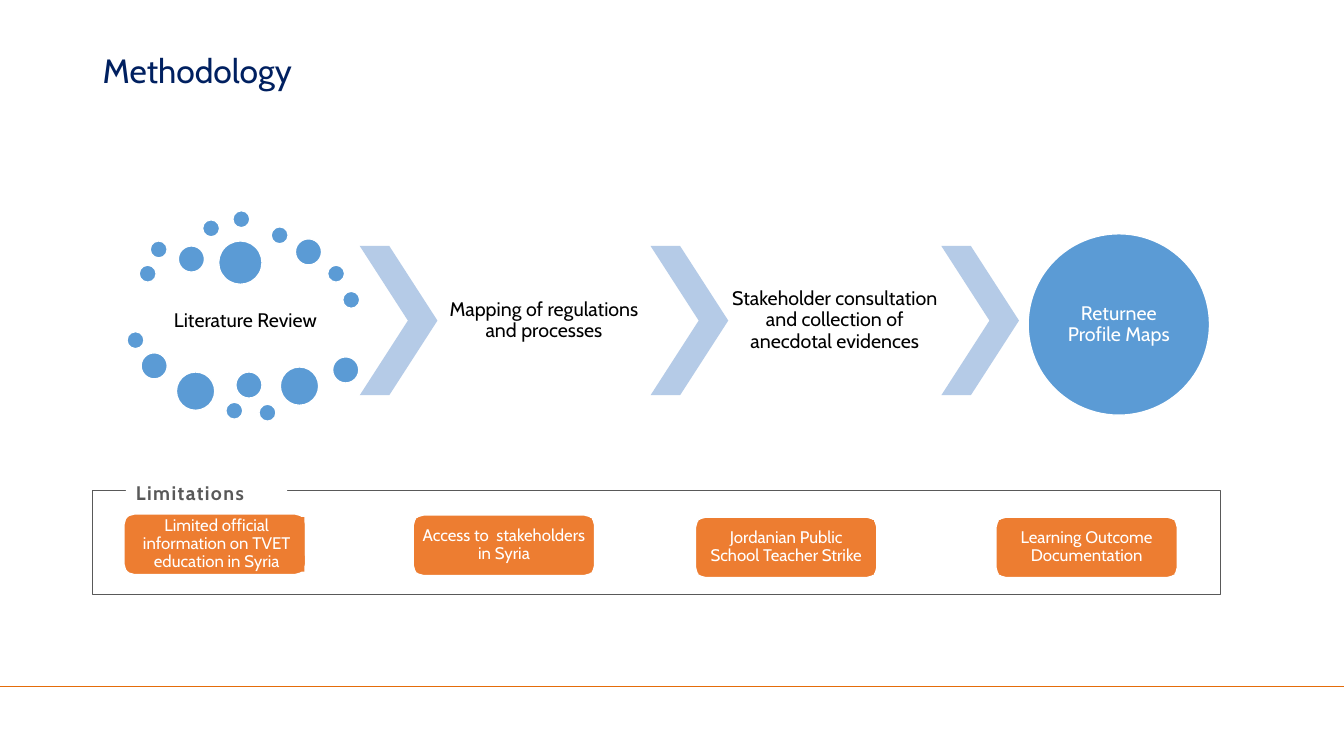
from lxml.etree import SubElement
from pptx import Presentation
from pptx.dml.color import RGBColor
from pptx.enum.shapes import MSO_CONNECTOR, MSO_SHAPE
from pptx.enum.text import MSO_ANCHOR, PP_ALIGN
from pptx.oxml.ns import qn
from pptx.util import Pt

NAVY = RGBColor(0x00, 0x20, 0x60)
BLUE = RGBColor(0x5B, 0x9B, 0xD5)
PALE_BLUE = RGBColor(0xB5, 0xCB, 0xE7)
ORANGE = RGBColor(0xED, 0x7D, 0x31)
RULE_ORANGE = RGBColor(0xE4, 0x6C, 0x0A)
GREY = RGBColor(0x59, 0x59, 0x59)
BLACK = RGBColor(0x00, 0x00, 0x00)
WHITE = RGBColor(0xFF, 0xFF, 0xFF)


class SlideBuilder:
    """Holds the text style and the current page; all lengths are in points."""

    font_name = "Cabin"

    def __init__(self, page):
        self.page = page

    def add_text(self, box, text, size, color, align=PP_ALIGN.CENTER,
                 anchor=MSO_ANCHOR.MIDDLE, inset=None, line_spacing=0.9,
                 bold=False, tracking=None):
        frame = box.text_frame
        frame.word_wrap = True
        frame.vertical_anchor = anchor
        if inset is not None:
            frame.margin_left = frame.margin_right = Pt(inset)
            frame.margin_top = frame.margin_bottom = Pt(inset)
        para = frame.paragraphs[0]
        para.alignment = align
        para.line_spacing = line_spacing
        para.space_before = Pt(0)
        span = para.add_run()
        span.text = text
        span.font.name = self.font_name
        span.font.size = Pt(size)
        span.font.bold = bold
        span.font.color.rgb = color
        if tracking:
            span.font._element.set("spc", str(tracking))

    def title(self, text, left, top, width, height):
        box = self.page.shapes.title
        box.left, box.top = Pt(left), Pt(top)
        box.width, box.height = Pt(width), Pt(height)
        self.add_text(box, text, 24, NAVY, align=PP_ALIGN.LEFT)

    def shape(self, kind, left, top, width, height, fill=None, line=None, line_width=1):
        box = self.page.shapes.add_shape(kind, Pt(left), Pt(top), Pt(width), Pt(height))
        box.shadow.inherit = False
        if fill is None:
            box.fill.background()
        else:
            box.fill.solid()
            box.fill.fore_color.rgb = fill
        if line is None:
            box.line.fill.background()
        else:
            box.line.color.rgb = line
            box.line.width = Pt(line_width)
        return box

    def circle(self, left, top, size):
        return self.shape(MSO_SHAPE.OVAL, left, top, size, size, BLUE, WHITE)

    def label(self, text, left, top, width, height):
        box = self.page.shapes.add_textbox(Pt(left), Pt(top), Pt(width), Pt(height))
        self.add_text(box, text, 14, BLACK, inset=1.4)

    def chevron(self, left, top, width, height):
        box = self.shape(MSO_SHAPE.CHEVRON, left, top, width, height, PALE_BLUE)
        box.adjustments[0] = 0.62

    def card(self, text, left, top, shift):
        self.shape(MSO_SHAPE.ROUNDED_RECTANGLE, left, top, 129.6, 43.2, ORANGE, WHITE)
        face = self.shape(MSO_SHAPE.RECTANGLE, left + shift, top + 2.2, 125.3, 38.9, ORANGE)
        self.add_text(face, text, 12, WHITE, inset=3.6)

    def rule(self, left, top, right, color, width):
        line = self.page.shapes.add_connector(
            MSO_CONNECTOR.STRAIGHT, Pt(left), Pt(top), Pt(right), Pt(top))
        line.line.color.rgb = color
        line.line.width = Pt(width)
        SubElement(line._element.spPr, qn("a:effectLst"))


# Left and top of each dot, by diameter
DOTS = {
    12.2: [(99.4, 189.4), (107.3, 172.1), (144.7, 157), (166.3, 150.5), (193.7, 162),
           (234, 189.4), (244.8, 208.1), (90.7, 236.9), (161.3, 287.3), (185, 288.7)],
    18.7: [(127.4, 175.7), (211, 170.6), (100.8, 252), (168.5, 265.7), (237.6, 254.9)],
    27.4: [(126, 265.7), (200.2, 262.1)],
    31: [(156.2, 172.1)],
}

# Text, left, top and inner shift of each limitation
LIMITATIONS = [
    ("Limited official information on TVET education in Syria", 88.6, 367.2, 3.6),
    ("Access to  stakeholders in Syria", 295.2, 367.9, 2.2),
    ("Jordanian Public School Teacher Strike", 496.8, 369.4, 2.2),
    ("Learning Outcome Documentation", 711.4, 369.4, 2.2),
]

STEPS = ["Mapping of regulations and processes",
         "Stakeholder consultation and collection of anecdotal evidences"]


def main():
    deck = Presentation()
    deck.slide_width, deck.slide_height = Pt(960), Pt(540)
    builder = SlideBuilder(deck.slides.add_slide(deck.slide_layouts[5]))

    # Footer rule and title
    builder.rule(0, 490.3, 960, RULE_ORANGE, 0.25)
    builder.title("Methodology", 66.2, 28.8, 838.8, 46.8)

    # Starting step ringed by dots
    builder.label("Literature Review", 99.4, 204.5, 151.9, 50.4)
    for size, places in DOTS.items():
        for left, top in places:
            builder.circle(left, top, size)

    # Chevrons with the steps between them
    first, pitch, chevron_width = 257, 207.7, 55.5
    top, height = 175.7, 106.6
    for index in range(len(STEPS) + 1):
        builder.chevron(first + index * pitch, top, chevron_width, height)
    for index, step in enumerate(STEPS):
        builder.label(step, first + chevron_width + index * pitch, top,
                      pitch - chevron_width, height)

    # Result
    result = builder.circle(734.4, 167, 129.6)
    builder.add_text(result, "Returnee Profile Maps", 14, WHITE, inset=0)

    # Limitations panel
    builder.shape(MSO_SHAPE.RECTANGLE, 66.2, 350.6, 805.7, 74.2, line=GREY, line_width=0.75)
    for limitation in LIMITATIONS:
        builder.card(*limitation)
    heading = builder.shape(MSO_SHAPE.RECTANGLE, 90, 339.1, 115.2, 21.6, WHITE)
    builder.add_text(heading, "Limitations", 14, GREY, align=PP_ALIGN.LEFT,
                     anchor=MSO_ANCHOR.TOP, line_spacing=1.07, bold=True, tracking=100)

    deck.save("out.pptx")


if __name__ == "__main__":
    main()
